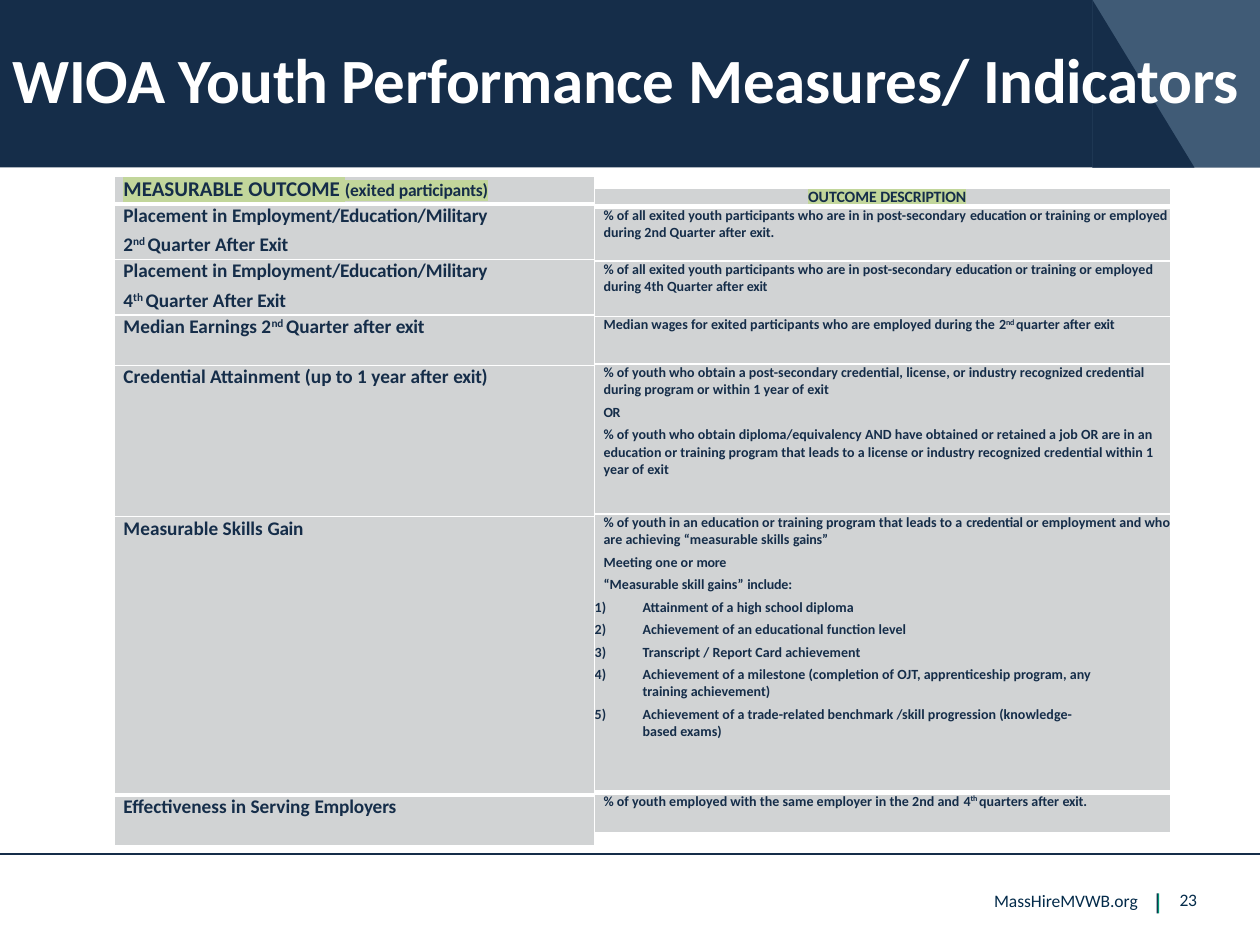
from dataclasses import dataclass

from lxml import etree
from pptx import Presentation
from pptx.dml.color import RGBColor
from pptx.enum.shapes import MSO_CONNECTOR, MSO_SHAPE
from pptx.enum.text import MSO_ANCHOR, PP_ALIGN
from pptx.oxml import parse_xml
from pptx.oxml.ns import nsdecls, qn
from pptx.util import Inches, Pt

LEFT, RIGHT = PP_ALIGN.LEFT, PP_ALIGN.RIGHT
CENTER, JUSTIFY = PP_ALIGN.CENTER, PP_ALIGN.JUSTIFY
MIDDLE = MSO_ANCHOR.MIDDLE
RECT, TRIANGLE = MSO_SHAPE.RECTANGLE, MSO_SHAPE.RIGHT_TRIANGLE
STRAIGHT = MSO_CONNECTOR.STRAIGHT


@dataclass(frozen=True)
class Theme:
    font: str = "Calibri"
    navy: str = "152D49"
    slate: str = "405B76"
    green: str = "009876"
    ink: str = "042B4A"
    white: str = "FFFFFF"
    gray: str = "D1D3D4"
    mark: str = "C2D69B"
    title: float = 36
    foot: float = 10
    head: float = 12
    note: float = 10
    label: float = 11
    small: float = 9
    body: float = 8


T = Theme()


# A run is (text, letter spacing in points, superscript)
def raised(text, spc=0.0):
    return (text, spc, True)


# A cell is a list of paragraphs; a paragraph is a list of runs
def quarter(num, suffix):
    return [[("Placement in ",), ("Employment/Education/Military", -0.1)],
            [(num,), raised(suffix), ("Quarter After",), (" Exit", -0.2)]]


OUTCOMES = [
    quarter("2", "nd "),
    quarter("4", "th "),
    [[("Median Earnings 2",), raised("nd "), ("Quarter after ",), ("exit", -0.2)]],
    [[("Credential Attainment (up to 1 year after",), (" exit)", -0.2)]],
    [[("Measurable Skills ",), ("Gain", -0.2)]],
    [[("Effectiveness in Serving ",), ("Employers", -0.1)]],
]
DETAILS = [
    [[("% of all exited youth participants who are in in post-secondary ",),
      ("education ", -0.1),
      ("or training or employed during 2nd Quarter after",), (" exit.", -0.1)]],
    [[("% of all exited youth participants who are in post-secondary",),
      (" education ", -0.1),
      ("or training or employed during 4th Quarter after",), (" exit", -0.2)]],
    [[("Median wages for exited participants who are employed during the ",),
      ("2", -0.2), raised("nd ", -0.2), ("quarter after ",), ("exit", -0.2)]],
    [[("% of youth who obtain a post-secondary credential, license, or industry "
       "recognized credential during program or within 1 year of exit",)],
     [("OR", -0.2)],
     [("% of youth who obtain diploma/equivalency AND have obtained or retained a "
       "job OR are in an education or training program that leads to a license or "
       "industry recognized credential within 1 year of exit",)]],
    [[("% of youth in an education or training program that leads to a ",),
      ("credential ", -0.1),
      ("or employment and who are achieving “measurable skills ",), ("gains”", -0.1)],
     [("Meeting one or ",), ("more", -0.2)],
     [("“Measurable skill gains” ",), ("include:", -0.1)]],
    [[("% of youth employed with the same employer in the 2nd and ",), ("4", -0.2),
      raised("th ", -0.2), ("quarters after ",), ("exit.", -0.1)]],
]
GAINS = [
    "Attainment of a high school diploma",
    "Achievement of an educational function level",
    "Transcript / Report Card achievement",
    "Achievement of a milestone (completion of OJT, apprenticeship program, any "
    "training achievement)",
    "Achievement of a trade-related benchmark /skill progression (knowledge-based "
    "exams)",
]


def add_run(para, size, color, text, spc=0.0, sup=False, bold=True, mark=None):
    run = para.add_run()
    run.text = text
    font = run.font
    font.name, font.size, font.bold = T.font, Pt(size), bold
    font.color.rgb = RGBColor.from_string(color)
    props = run.font.fill._xPr
    if spc:
        props.set("spc", str(round(spc * 100)))
    if sup:
        props.set("baseline", "30000")
    if mark:
        props.find(qn("a:solidFill")).addnext(parse_xml(
            f'<a:highlight {nsdecls("a")}><a:srgbClr val="{mark}"/></a:highlight>'))


def add_box(slide, kind, box, color):
    shape = slide.shapes.add_shape(kind, *map(Inches, box))
    shape.shadow.inherit = False
    shape.fill.solid()
    shape.fill.fore_color.rgb = RGBColor.from_string(color)
    shape.line.fill.background()


def add_text(slide, box, align, wrap=True):
    frame = slide.shapes.add_textbox(*map(Inches, box)).text_frame
    frame.word_wrap, frame.vertical_anchor = wrap, MIDDLE
    frame.margin_left = frame.margin_right = 0
    frame.margin_top = frame.margin_bottom = 0
    para = frame.paragraphs[0]
    para.alignment = align
    return para


def set_indent(para, left, first=0.0, right=0.0):
    props = para._p.get_or_add_pPr()
    for key, val in (("marL", left), ("indent", first), ("marR", right)):
        props.set(key, str(Inches(val)))
    return props


# Title band with slanted corner
def add_header(slide, left, top, width, height):
    add_box(slide, RECT, (left, top, width, height), T.navy)
    corner = left + width - 1.33
    add_box(slide, RECT, (corner, top, 1.33, height), T.slate)
    add_box(slide, TRIANGLE, (corner, top, 0.81, height), T.navy)
    para = add_text(slide, (left + 0.09, top + 0.32, 9.79, 0.61), LEFT)
    set_indent(para, 0.01)
    for text, spc in (("WIOA Youth Performance ", -0.2), ("Measures/ ", -0.1),
                      ("Indicators", -0.2)):
        add_run(para, T.title, T.white, text, spc)


# Rule, web address and page number
def add_footer(slide, left, top, width):
    rule = slide.shapes.add_connector(
        STRAIGHT, *map(Inches, (left, top, left + width, top)))
    rule.line.color.rgb = RGBColor.from_string(T.navy)
    rule.line.width = Pt(1)
    etree.SubElement(rule._element.spPr, qn("a:effectLst"))
    add_box(slide, RECT, (left + 9.18, top + 0.31, 0.01, 0.16), T.navy)
    add_box(slide, RECT, (left + 9.19, top + 0.31, 0.01, 0.16), T.green)
    site = add_text(slide, (left + 4.76, top + 0.17, 4.27, 0.4), RIGHT, False)
    add_run(site, T.foot, T.ink, "MassHireMVWB.org", bold=False)
    page = add_text(slide, (left + 9.18, top + 0.17, 0.32, 0.4), RIGHT)
    page.line_spacing = Pt(10.4)
    add_run(page, T.foot, T.ink, "23", -0.1, bold=False)


def next_para(cell, align):
    frame = cell.text_frame
    para = frame.paragraphs[0]
    if para.runs:
        para = frame.add_paragraph()
        para.space_before = Pt(3)
    para.alignment = align
    return para


def style_cell(cell, above, below):
    cell.margin_left = cell.margin_right = 0
    cell.margin_top = cell.margin_bottom = 0
    props = cell._tc.get_or_add_tcPr()
    for side, wide in (("L", 1), ("R", 1), ("T", above), ("B", below)):
        props.append(parse_xml(
            f'<a:ln{side} {nsdecls("a")} w="{Pt(wide)}"><a:solidFill>'
            f'<a:srgbClr val="{T.white}"/></a:solidFill></a:ln{side}>'))
    cell.fill.solid()
    cell.fill.fore_color.rgb = RGBColor.from_string(T.gray)


# One-column table: heading runs (size, text, spacing), then body rows
def add_column(slide, left, top, width, rows, head, body, size, aligns):
    count = len(rows)
    table = slide.shapes.add_table(
        count, 1, *map(Inches, (left, top, width, sum(rows)))).table
    table.first_row = table.horz_banding = False
    table.columns[0].width = Inches(width)
    for i, high in enumerate(rows):
        table.rows[i].height = Inches(high)
        style_cell(table.cell(i, 0), 3 if i in (1, count - 1) else 1,
                   3 if i in (0, count - 2) else 1)
    para = next_para(table.cell(0, 0), aligns[0])
    set_indent(para, 0.07)
    for pts, text, spc in head:
        add_run(para, pts, T.navy, text, spc, mark=T.mark)
    for i, parts in enumerate(body, 1):
        for runs in parts:
            para = next_para(table.cell(i, 0), aligns[1])
            set_indent(para, 0.07)
            for run in runs:
                add_run(para, size, T.navy, *run)
    return table


def add_gains(cell):
    for text in GAINS:
        para = next_para(cell, LEFT)
        props = set_indent(para, 0.38, -0.38, 0.6)
        etree.SubElement(props, qn("a:buAutoNum"), type="arabicParenR")
        tabs = etree.SubElement(props, qn("a:tabLst"))
        etree.SubElement(tabs, qn("a:tab"), pos=str(Inches(0.27)), algn="l")
        add_run(para, T.body, T.navy, text)


def main():
    deck = Presentation()
    deck.slide_width, deck.slide_height = Inches(10), Inches(7.5)
    slide = deck.slides.add_slide(deck.slide_layouts[6])
    add_header(slide, 0, 0, 10, 1.33)
    add_footer(slide, 0, 6.78, 10)
    add_column(slide, 0.91, 1.4, 3.81, [0.22, 0.44, 0.44, 0.4, 1.2, 2.21, 0.4],
               [(T.head, "MEASURABLE", 0), (T.head, " ", -0.3), (T.head, "OUTCOME", 0),
                (T.head, " ", -0.2), (T.note, "(exited", 0), (T.note, " ", -0.2),
                (T.note, "participants)", -0.1)],
               OUTCOMES, T.label, (JUSTIFY, JUSTIFY))
    table = add_column(slide, 4.72, 1.49, 4.57, [0.15, 0.43, 0.44, 0.38, 1.19, 2.21, 0.32],
                       [(T.small, "OUTCOME", 0), (T.small, " ", -0.2),
                        (T.small, "DESCRIPTION", -0.1)],
                       DETAILS, T.body, (CENTER, LEFT))
    add_gains(table.cell(5, 0))
    deck.save("out.pptx")


if __name__ == "__main__":
    main()
